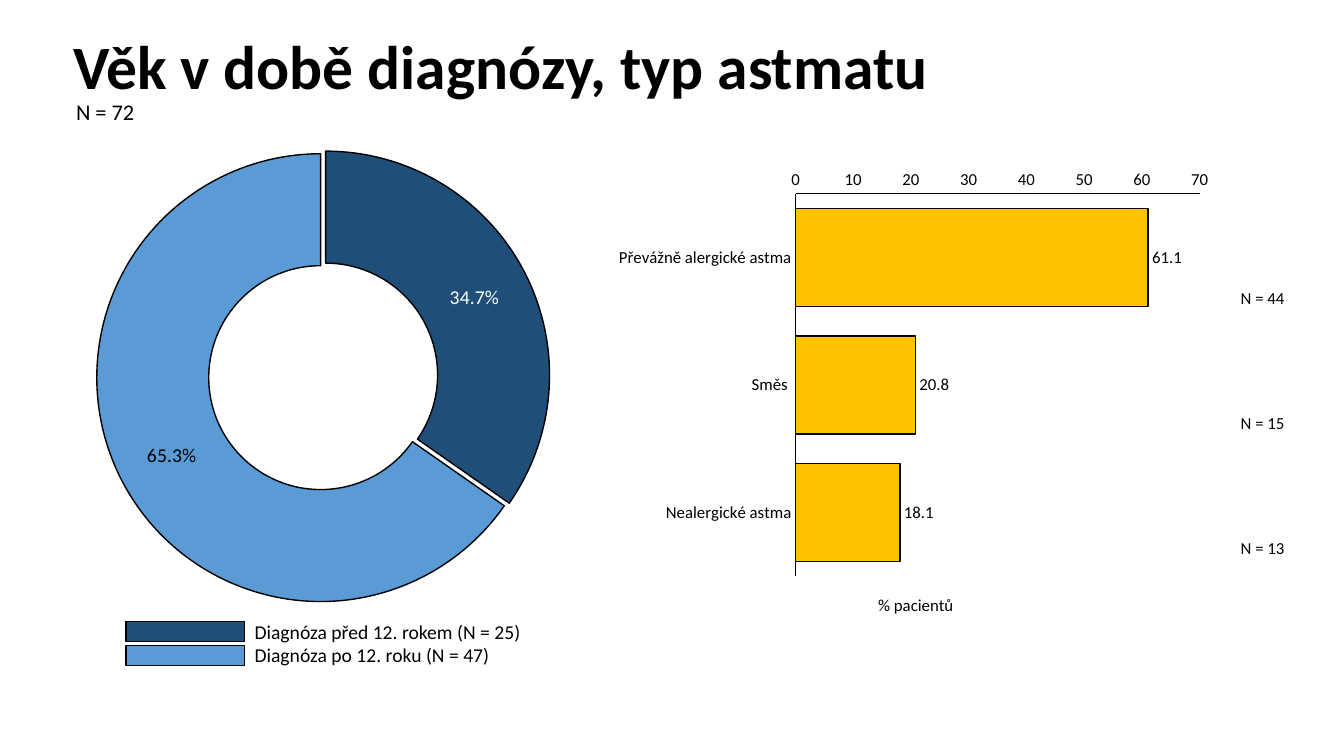
from dataclasses import dataclass

from lxml.etree import SubElement
from pptx import Presentation
from pptx.chart.data import CategoryChartData
from pptx.dml.color import RGBColor
from pptx.enum.chart import XL_CHART_TYPE as ChartType
from pptx.enum.chart import XL_LABEL_POSITION as LabelPos
from pptx.enum.chart import XL_TICK_MARK as Tick
from pptx.enum.shapes import MSO_SHAPE as Preset
from pptx.enum.text import MSO_ANCHOR as Anchor
from pptx.enum.text import MSO_AUTO_SIZE as AutoSize
from pptx.enum.text import PP_ALIGN as Align
from pptx.oxml.ns import qn
from pptx.util import Emu, Pt

EMU_PER_PX = 9525
FONT = "Calibri"
BLACK, WHITE, AMBER = "000000", "FFFFFF", "FFC000"


@dataclass(frozen=True)
class AgeGroup:
    label: str
    percent: float
    color: str
    label_color: str


@dataclass(frozen=True)
class AsthmaType:
    name: str
    percent: float
    count: int


AGE_GROUPS = [
    AgeGroup("Diagnóza před 12. rokem (N = 25)", 34.7, "1F4E79", WHITE),
    AgeGroup("Diagnóza po 12. roku (N = 47)", 65.3, "5B9BD5", BLACK),
]
ASTHMA_TYPES = [
    AsthmaType("Převážně alergické astma", 61.1, 44),
    AsthmaType("Směs ", 20.8, 15),
    AsthmaType("Nealergické astma", 18.1, 13),
]


def px(*lengths: int) -> list[Emu]:
    return [Emu(length * EMU_PER_PX) for length in lengths]


def rgb(color: str) -> RGBColor:
    return RGBColor.from_string(color)


def set_font(font, size: int, color: str = BLACK, bold: bool = False) -> None:
    font.name, font.size, font.bold = FONT, Pt(size), bold
    font.color.rgb = rgb(color)


def set_fill(fill, color: str) -> None:
    fill.solid()
    fill.fore_color.rgb = rgb(color)


def set_line(line, color: str = BLACK) -> None:
    line.color.rgb = rgb(color)
    line.width = Pt(1)


def set_layout(parent, **fractions: float) -> None:
    """Place a chart part by fractions of the chart area."""
    layout = parent.find(qn("c:layout"))
    if layout is None:
        layout = SubElement(parent, qn("c:layout"))
        parent.insert(0, layout)
    manual = SubElement(layout, qn("c:manualLayout"))
    if "w" in fractions:
        SubElement(manual, qn("c:layoutTarget"), val="inner")
    for side in "xy":
        SubElement(manual, qn(f"c:{side}Mode"), val="edge")
    for key, value in fractions.items():
        SubElement(manual, qn(f"c:{key}"), val=str(value))


def add_chart(slide, kind, box: list[Emu], names: list[str], values: list[float],
              size: int, plot_box: dict[str, float]):
    data = CategoryChartData()
    data.categories = names
    data.add_series("Series 1", values)
    chart = slide.shapes.add_chart(kind, *box, data).chart
    chart.has_legend = chart.has_title = False
    set_font(chart.font, size)
    set_layout(chart._chartSpace.chart.plotArea, **plot_box)
    return chart


def add_age_doughnut(slide) -> None:
    chart = add_chart(slide, ChartType.DOUGHNUT, px(62, 133, 487, 449), ["1", "2"],
                      [group.percent for group in AGE_GROUPS], 10,
                      dict(x=0.06, y=0.03, w=0.88, h=0.95))
    plot = chart.plots[0]
    plot.vary_by_categories = True
    plot._element.find(qn("c:holeSize")).set("val", "49")
    series = plot.series[0]
    labels = series.data_labels
    labels.show_value, labels.show_percentage = False, True
    labels.number_format, labels.number_format_is_linked = "0.0%", False
    set_font(labels.font, 14)
    for index, group in enumerate(AGE_GROUPS):
        point = series.points[index]
        set_fill(point.format.fill, group.color)
        set_line(point.format.line)
        set_font(point.data_label.font, 14, group.label_color)
    for label in series._element.iter(qn("c:dLbl")):
        label.find(qn("c:showVal")).set("val", "0")
        label.find(qn("c:showPercent")).set("val", "1")
        number = SubElement(label, qn("c:numFmt"), formatCode="0.0%", sourceLinked="0")
        label.insert(1, number)
    # Pull the first slice out
    first = series._element.find(qn("c:dPt"))
    first.find(qn("c:idx")).addnext(SubElement(first, qn("c:explosion"), val="5"))


def add_age_legend(slide) -> None:
    legend = slide.shapes.add_group_shape().shapes

    def add_box(box: list[Emu], color: str):
        shape = legend.add_shape(Preset.RECTANGLE, *box)
        shape.shadow.inherit = False
        set_fill(shape.fill, color)
        return shape

    captions = add_box(px(233, 576, 297, 73), WHITE)
    captions.line.fill.background()
    frame = captions.text_frame
    frame.vertical_anchor = Anchor.MIDDLE
    frame.text = "\n".join(group.label for group in AGE_GROUPS)
    for paragraph in frame.paragraphs:
        paragraph.alignment = Align.LEFT
        set_font(paragraph.font, 14)
    for index, group in enumerate(AGE_GROUPS):
        set_line(add_box(px(120, 592 + 23 * index, 113, 19), group.color).line)


def add_type_bars(slide) -> None:
    chart = add_chart(slide, ChartType.BAR_CLUSTERED, px(577, 153, 583, 450),
                      [kind.name for kind in ASTHMA_TYPES],
                      [kind.percent for kind in ASTHMA_TYPES], 12,
                      dict(x=0.31, y=0.07, w=0.66, h=0.81))
    plot = chart.plots[0]
    plot.vary_by_categories = False
    plot.gap_width = 30
    bars = plot.series[0]
    set_fill(bars.format.fill, AMBER)
    set_line(bars.format.line)
    labels = bars.data_labels
    labels.show_value, labels.position = True, LabelPos.OUTSIDE_END
    labels.number_format, labels.number_format_is_linked = "0.0", False
    set_font(labels.font, 12)

    types, percents = chart.category_axis, chart.value_axis
    for axis in (types, percents):
        axis.major_tick_mark = axis.minor_tick_mark = Tick.NONE
        axis.has_major_gridlines = False
        set_line(axis.format.line)
        set_font(axis.tick_labels.font, 12)
    types.reverse_order = True
    percents.minimum_scale, percents.maximum_scale, percents.major_unit = 0, 70, 10
    percents.tick_labels.number_format = "#,##0"
    percents.tick_labels.number_format_is_linked = False
    title = percents.axis_title
    title.text_frame.text = "% pacientů"
    set_font(title.text_frame.paragraphs[0].font, 12)
    set_layout(title._element, x=0.44, y=0.91)


def add_type_counts(slide) -> None:
    table = slide.shapes.add_table(len(ASTHMA_TYPES), 1, *px(1160, 225, 85, 357)).table
    table.first_row = table.horz_banding = False
    for index, kind in enumerate(ASTHMA_TYPES):
        cell = table.cell(index, 0)
        set_fill(cell.fill, WHITE)
        cell.vertical_anchor = Anchor.MIDDLE
        cell.margin_left, cell.margin_top, cell.margin_right, cell.margin_bottom = px(1, 1, 1, 0)
        cell.text = f"N = {kind.count}"
        paragraph = cell.text_frame.paragraphs[0]
        paragraph.alignment = Align.CENTER
        set_font(paragraph.font, 12)


def add_heading(slide) -> None:
    title = slide.shapes.title
    title.left, title.top, title.width, title.height = px(60, 19, 1161, 94)
    frame = title.text_frame
    frame.text = "Věk v době diagnózy, typ astmatu"
    frame.auto_size, frame.vertical_anchor = AutoSize.NONE, Anchor.MIDDLE
    heading = frame.paragraphs[0]
    heading.alignment, heading.line_spacing = Align.LEFT, 0.9
    set_font(heading.font, 44, bold=True)


def add_sample_size(slide) -> None:
    frame = slide.shapes.add_textbox(*px(63, 86, 96, 40)).text_frame
    frame.word_wrap, frame.vertical_anchor = True, Anchor.MIDDLE
    frame.text = "N = 72"
    set_font(frame.paragraphs[0].font, 16)


def main() -> None:
    deck = Presentation()
    deck.slide_width, deck.slide_height = px(1280, 720)
    slide = deck.slides.add_slide(deck.slide_layouts[5])
    for add_part in (add_heading, add_age_doughnut, add_age_legend,
                     add_type_bars, add_type_counts, add_sample_size):
        add_part(slide)
    deck.save("out.pptx")


if __name__ == "__main__":
    main()
